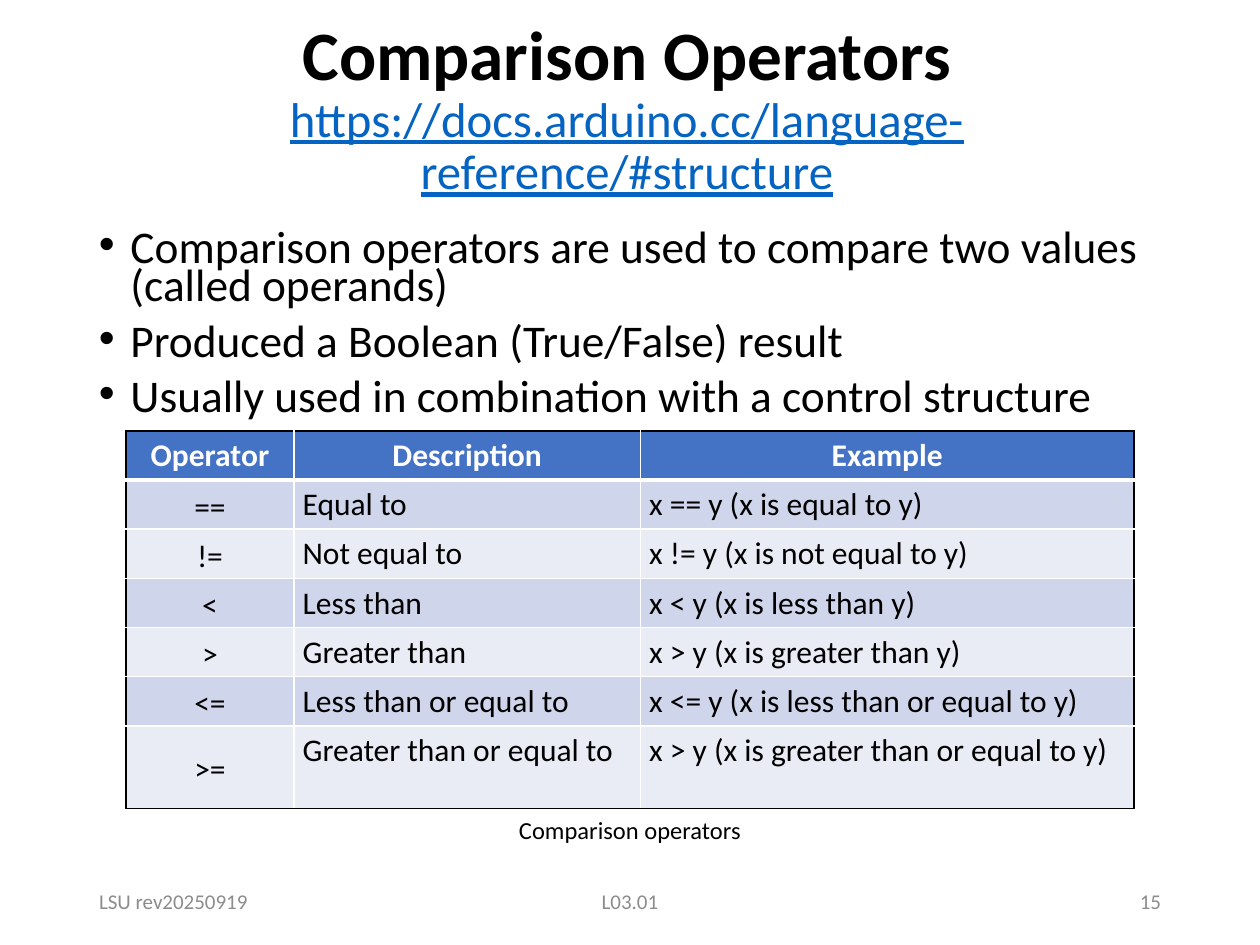
from dataclasses import dataclass

from lxml.etree import SubElement
from pptx import Presentation
from pptx.dml.color import RGBColor
from pptx.enum.text import MSO_ANCHOR, PP_ALIGN
from pptx.oxml.ns import qn
from pptx.slide import Slide
from pptx.table import _Cell
from pptx.text.text import TextFrame, _Paragraph
from pptx.util import Pt


@dataclass(frozen=True)
class Theme:
    font: str = "Calibri"
    black: str = "000000"
    white: str = "FFFFFF"
    link: str = "0563C1"
    gray: str = "8C8C8C"
    head: str = "4472C4"
    bands: tuple[str, str] = ("CFD5EA", "E9EBF5")
    title: float = 39.6
    url: float = 27.9
    body: float = 25.9
    cell: float = 18
    label: float = 14
    foot: float = 12


@dataclass(frozen=True)
class Box:
    left: float
    top: float
    width: float
    height: float


@dataclass(frozen=True)
class Label:
    text: str
    box: Box
    size: float
    color: str
    align: PP_ALIGN
    anchor: MSO_ANCHOR


THEME = Theme()
LEFT, MID, RIGHT = PP_ALIGN.LEFT, PP_ALIGN.CENTER, PP_ALIGN.RIGHT

POINTS = (
    "Comparison operators are used to compare two values (called operands)",
    "Produced a Boolean (True/False) result",
    "Usually used in combination with a control structure",
)
ROWS = (
    ("Operator", "Description", "Example"),
    ("==", "Equal to", "x == y (x is equal to y)"),
    ("!=", "Not equal to", "x != y (x is not equal to y)"),
    ("<", "Less than", "x < y (x is less than y)"),
    (">", "Greater than", "x > y (x is greater than y)"),
    ("<=", "Less than or equal to", "x <= y (x is less than or equal to y)"),
    (">=", "Greater than or equal to", "x > y (x is greater than or equal to y)"),
)
WIDTHS = (96, 198, 282)
HEIGHTS = (28.1,) * 6 + (47.4,)
LABELS = (
    Label("Comparison operators", Box(72, 462, 576, 24.5),
          THEME.label, THEME.black, MID, MSO_ANCHOR.TOP),
    Label("LSU rev20250919", Box(49.5, 500.5, 162, 28.8),
          THEME.foot, THEME.gray, LEFT, MSO_ANCHOR.MIDDLE),
    Label("L03.01", Box(238.5, 500.5, 243, 28.8),
          THEME.foot, THEME.gray, MID, MSO_ANCHOR.MIDDLE),
    Label("15", Box(508.5, 500.5, 162, 28.8),
          THEME.foot, THEME.gray, RIGHT, MSO_ANCHOR.MIDDLE),
)


def add_run(para: _Paragraph, text: str, size: float, color: str,
            bold: bool = False, under: bool = False) -> None:
    run = para.add_run()
    run.text = text
    font = run.font
    font.name, font.size = THEME.font, Pt(size)
    font.bold, font.underline = bold, under
    font.color.rgb = RGBColor.from_string(color)


def add_box(slide: Slide, box: Box, anchor: MSO_ANCHOR) -> TextFrame:
    shape = slide.shapes.add_textbox(
        Pt(box.left), Pt(box.top), Pt(box.width), Pt(box.height))
    frame = shape.text_frame
    frame.word_wrap = True
    frame.vertical_anchor = anchor
    return frame


def add_label(slide: Slide, item: Label) -> None:
    para = add_box(slide, item.box, item.anchor).paragraphs[0]
    para.alignment = item.align
    add_run(para, item.text, item.size, item.color)


def add_title(slide: Slide) -> None:
    frame = add_box(slide, Box(126.7, 10.8, 463, 104.4), MSO_ANCHOR.MIDDLE)
    para = frame.paragraphs[0]
    para.alignment, para.line_spacing = MID, 0.9
    add_run(para, "Comparison Operators", THEME.title, THEME.black, bold=True)
    para.add_line_break()
    add_run(para, "https://docs.arduino.cc/language-reference/#structure",
            THEME.url, THEME.link, under=True)


def add_points(slide: Slide) -> None:
    frame = add_box(slide, Box(49.5, 129.6, 621, 126), MSO_ANCHOR.TOP)
    for num, text in enumerate(POINTS):
        para = frame.add_paragraph() if num else frame.paragraphs[0]
        para.line_spacing = 0.7
        para.space_before = Pt(10 if num else 0)
        props = para._p.get_or_add_pPr()
        props.set("marL", str(Pt(18)))
        props.set("indent", str(Pt(-18)))
        SubElement(props, qn("a:buFont"), typeface="Arial")
        SubElement(props, qn("a:buChar"), char="•")
        add_run(para, text, THEME.body, THEME.black)


def set_edge(cell: _Cell, side: str, color: str, width: float) -> None:
    line = SubElement(cell._tc.get_or_add_tcPr(), qn(f"a:{side}"),
                      w=str(Pt(width)))
    fill = SubElement(line, qn("a:solidFill"))
    SubElement(fill, qn("a:srgbClr"), val=color)


def fill_cell(cell: _Cell, row: int, col: int) -> None:
    head, last = row == 0, row == len(ROWS) - 1
    cell.margin_left = cell.margin_right = Pt(5)
    cell.margin_top = cell.margin_bottom = Pt(0)
    mid = col == 0 and not head
    cell.vertical_anchor = MSO_ANCHOR.MIDDLE if mid else MSO_ANCHOR.TOP

    # Black outer frame, white inner rules, thick rule by the header
    outer = {"lnL": col == 0, "lnR": col == len(WIDTHS) - 1,
             "lnT": head, "lnB": last}
    thick = {"lnB": head, "lnT": row == 1}
    for side, edge in outer.items():
        set_edge(cell, side, THEME.black if edge else THEME.white,
                 3 if thick.get(side) else 1)

    cell.fill.solid()
    color = THEME.head if head else THEME.bands[(row - 1) % 2]
    cell.fill.fore_color.rgb = RGBColor.from_string(color)
    para = cell.text_frame.paragraphs[0]
    para.alignment = MID if head or col == 0 else LEFT
    para.line_spacing = 1.15
    add_run(para, ROWS[row][col], THEME.cell,
            THEME.white if head else THEME.black, bold=head)


def add_grid(slide: Slide) -> None:
    table = slide.shapes.add_table(
        len(ROWS), len(WIDTHS), Pt(72), Pt(246.2),
        Pt(sum(WIDTHS)), Pt(sum(HEIGHTS))).table
    for col, width in zip(table.columns, WIDTHS):
        col.width = Pt(width)
    for row, height in enumerate(HEIGHTS):
        table.rows[row].height = Pt(height)
        for col in range(len(WIDTHS)):
            fill_cell(table.cell(row, col), row, col)


def main() -> None:
    deck = Presentation()
    deck.slide_width, deck.slide_height = Pt(720), Pt(540)
    slide = deck.slides.add_slide(deck.slide_layouts[6])

    # Heading and bullets
    add_title(slide)
    add_points(slide)

    # Operator table
    add_grid(slide)

    # Caption and footer
    for item in LABELS:
        add_label(slide, item)
    deck.save("out.pptx")


if __name__ == "__main__":
    main()
